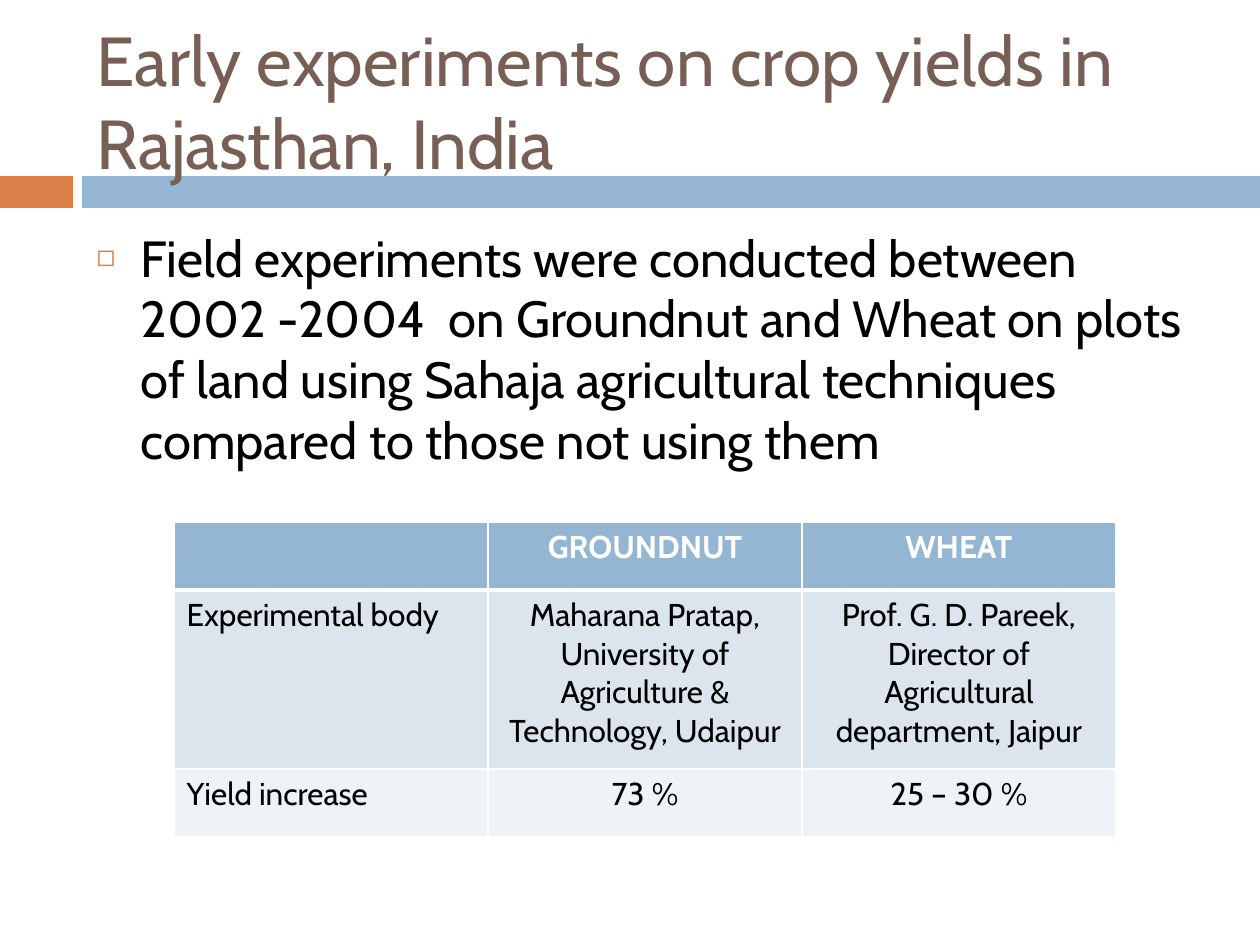
"""Build the slide on crop yield experiments in Rajasthan."""
from pptx import Presentation, util as u
from pptx.dml.color import RGBColor
from pptx.enum import shapes, text
from pptx.oxml import parse_xml
from pptx.oxml.ns import nsdecls

SCALE = 914400 / 126
WHITE = RGBColor(0xFF, 0xFF, 0xFF)
BLACK = RGBColor(0, 0, 0)
BROWN = RGBColor(0x77, 0x5F, 0x55)
ORANGE = RGBColor(0xDD, 0x80, 0x47)
BLUE = RGBColor(0x94, 0xB6, 0xD2)
PALE = RGBColor(0xDC, 0xE5, 0xEE)
FAINT = RGBColor(0xEE, 0xF3, 0xF7)

TITLE = "Early experiments on crop yields in Rajasthan, India"
BODY = ("Field experiments were conducted between 2002 -2004  on Groundnut and Wheat "
        "on plots of land using Sahaja agricultural techniques compared to those not using them")
ROWS = [
    ("", "GROUNDNUT", "WHEAT"),
    ("Experimental body",
     "Maharana Pratap, University of Agriculture & Technology, Udaipur",
     "Prof. G. D. Pareek, Director of Agricultural department, Jaipur"),
    ("Yield increase", "73 %", "25 – 30 %"),
]
FILLS = (BLUE, PALE, FAINT)
HIGHS = (68, 179, 68)
WIDE = 314


def px(num):
    """Turn pixels into EMU."""
    return u.Emu(round(num * SCALE))


def style(para, size, color, align=text.PP_ALIGN.LEFT, bold=False):
    """Format a paragraph and its font."""
    para.alignment = align
    para.font.color.rgb = color
    form = {"name": "Cabin", "size": u.Pt(size), "bold": bold}
    for key, val in form.items():
        setattr(para.font, key, val)


def add_bar(slide, left, wide, color):
    """Add a plain bar behind the text."""
    bar = slide.shapes.add_shape(shapes.MSO_SHAPE.RECTANGLE,
                                 px(left), px(176), px(wide), px(32))
    bar.shadow.inherit = False
    bar.fill.solid()
    bar.fill.fore_color.rgb = color
    bar.line.fill.background()
    slide.shapes.element.insert(2, bar.element)


def fill_holder(shape, words, box, size, color, anchor):
    """Place a placeholder, write its text and return the paragraph."""
    for key, val in zip(("left", "top", "width", "height"), box):
        setattr(shape, key, px(val))
    frame = shape.text_frame
    form = {"text": words, "word_wrap": True, "vertical_anchor": anchor,
            "auto_size": text.MSO_AUTO_SIZE.NONE}
    for key, val in form.items():
        setattr(frame, key, val)
    para = frame.paragraphs[0]
    style(para, size, color)
    return para


def add_bullet(para):
    """Give a paragraph a small square bullet and a hanging indent."""
    para.space_before = u.Pt(7)
    props = para._p.get_or_add_pPr()
    props.set("marL", str(px(44)))
    props.set("indent", str(-px(44)))
    for part in (f'<a:buClr {nsdecls("a")}><a:srgbClr val="{ORANGE}"/></a:buClr>',
                 f'<a:buSzPct {nsdecls("a")} val="60000"/>',
                 f'<a:buChar {nsdecls("a")} char="◻"/>'):
        props.append(parse_xml(part))


def add_edges(cell, row):
    """Draw white cell borders, thick under the header."""
    thick = {(0, "B"), (1, "T")}
    for side in "LRTB":
        size = u.Pt(3 if (row, side) in thick else 1)
        cell._tc.get_or_add_tcPr().append(parse_xml(
            f'<a:ln{side} {nsdecls("a")} w="{size}"><a:solidFill>'
            f'<a:srgbClr val="{WHITE}"/></a:solidFill></a:ln{side}>'))


def add_grid(slide):
    """Add the table of results."""
    grid = slide.shapes.add_table(len(ROWS), len(ROWS[0]), px(174), px(522),
                                  px(3 * WIDE), px(sum(HIGHS))).table
    for col in grid.columns:
        col.width = px(WIDE)
    for row, words in enumerate(ROWS):
        grid.rows[row].height = px(HIGHS[row])
        head = row == 0
        for col, word in enumerate(words):
            cell = grid.cell(row, col)
            add_edges(cell, row)
            cell.fill.solid()
            cell.fill.fore_color.rgb = FILLS[row]
            cell.text = word
            align = text.PP_ALIGN.CENTER if col else text.PP_ALIGN.LEFT
            style(cell.text_frame.paragraphs[0], 18, WHITE if head else BLACK, align, head)


def main():
    """Build and save the slide."""
    prs = Presentation()
    prs.slide_width, prs.slide_height = px(1260), px(945)
    slide = prs.slides.add_slide(prs.slide_layouts[1])
    add_bar(slide, 0, 73, ORANGE)
    add_bar(slide, 82, 1178, BLUE)
    fill_holder(slide.shapes.title, TITLE, (84, 32, 1124, 136), 39.6, BROWN,
                text.MSO_ANCHOR.MIDDLE)
    para = fill_holder(slide.placeholders[1], BODY, (84, 220, 1124, 620), 29, BLACK,
                       text.MSO_ANCHOR.TOP)
    add_bullet(para)
    add_grid(slide)
    prs.save("out.pptx")


if __name__ == "__main__":
    main()
